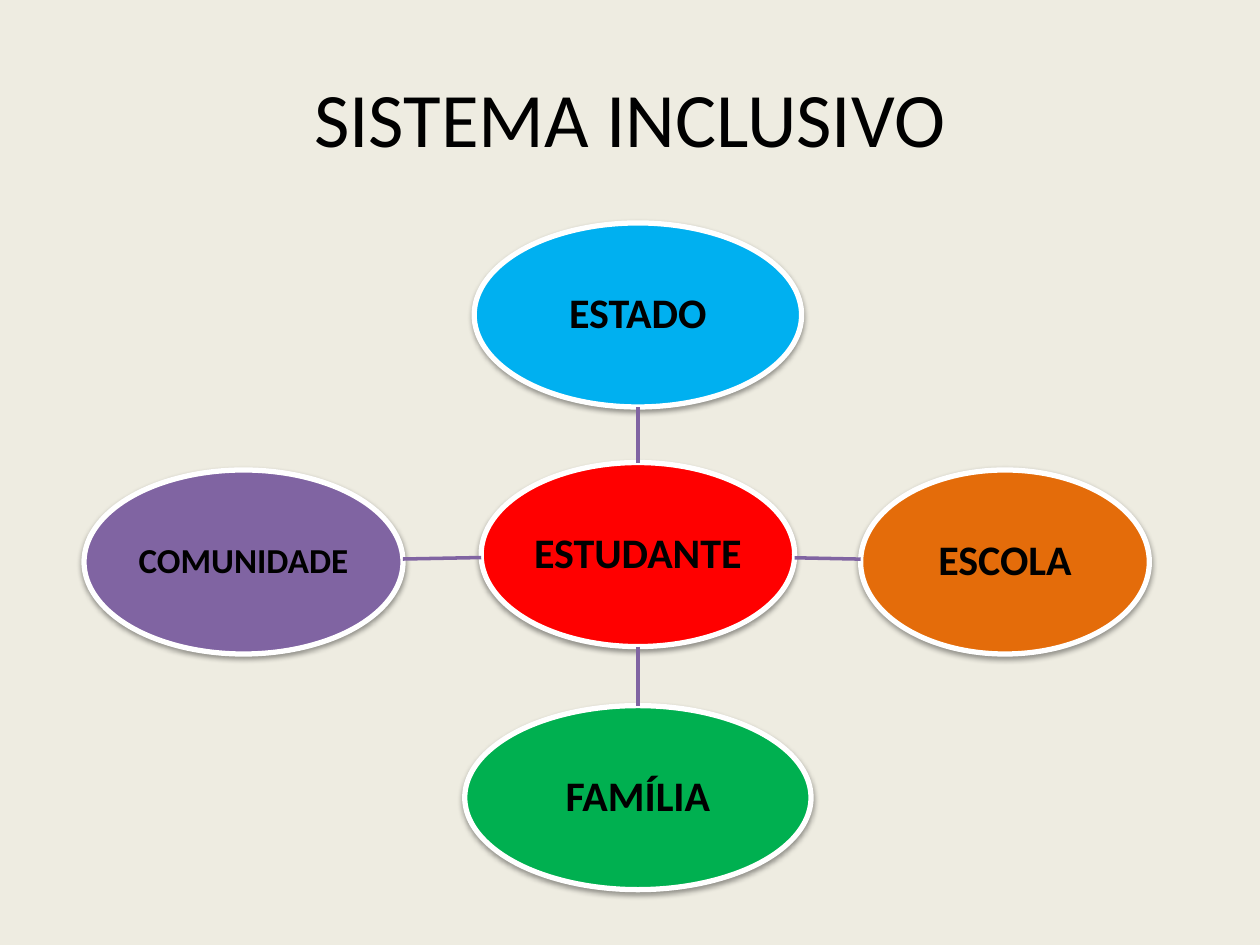
import math

import lxml.etree
import pptx
import pptx.dml.color
import pptx.enum.shapes
import pptx.enum.text
import pptx.oxml.ns
import pptx.util

Cm = pptx.util.Cm
RGBColor = pptx.dml.color.RGBColor
qn = pptx.oxml.ns.qn

CREAM = RGBColor(0xEE, 0xEC, 0xE1)
BLACK = RGBColor(0x00, 0x00, 0x00)
WHITE = RGBColor(0xFF, 0xFF, 0xFF)
RED = RGBColor(0xFF, 0x00, 0x00)
BLUE = RGBColor(0x00, 0xB0, 0xF0)
ORANGE = RGBColor(0xE4, 0x6C, 0x0A)
GREEN = RGBColor(0x00, 0xB0, 0x50)
PURPLE = RGBColor(0x80, 0x64, 0xA2)

OVAL_HEIGHT = 3.71
HUB = ("ESTUDANTE", 12.86, 11.18, 6.32, RED, 24)
# label, centre x, centre y, width (cm), fill, text size (pt)
SPOKES = [
    ("ESTADO", 12.86, 6.35, 6.6, BLUE, 24),
    ("ESCOLA", 20.26, 11.33, 5.82, ORANGE, 24),
    ("FAMÍLIA", 12.86, 16.08, 6.98, GREEN, 24),
    ("COMUNIDADE", 4.91, 11.33, 6.43, PURPLE, 20),
]


def write_text(shape, text, *, size, bold=False, line_spacing=1.0, inset=0.25):
    frame = shape.text_frame
    frame.word_wrap = True
    frame.vertical_anchor = pptx.enum.text.MSO_ANCHOR.MIDDLE
    frame.margin_left = frame.margin_right = Cm(inset)
    frame.margin_top = frame.margin_bottom = Cm(inset)
    para = frame.paragraphs[0]
    para.alignment = pptx.enum.text.PP_ALIGN.CENTER
    para.line_spacing = line_spacing
    span = para.add_run()
    span.text = text
    span.font.name = "Calibri"
    span.font.size = pptx.util.Pt(size)
    span.font.bold = bold
    span.font.color.rgb = BLACK


def rim_point(oval, target):
    """Return where the line from the oval's centre to the target's crosses its rim."""
    x, y, width = oval[1:4]
    dx, dy = target[1] - x, target[2] - y
    scale = 1 / math.hypot(dx / (width / 2), dy / (OVAL_HEIGHT / 2))
    return Cm(x + dx * scale), Cm(y + dy * scale)


deck = pptx.Presentation()
deck.slide_width = Cm(25.4)
deck.slide_height = Cm(19.05)
page = deck.slides.add_slide(deck.slide_layouts[6])
page.background.fill.solid()
page.background.fill.fore_color.rgb = CREAM

title = page.shapes.add_textbox(Cm(1.27), Cm(0.76), Cm(22.86), Cm(3.18))
write_text(title, "SISTEMA INCLUSIVO", size=44)

for oval in [HUB, *SPOKES]:
    label, x, y, width, colour, size = oval
    shape = page.shapes.add_shape(
        pptx.enum.shapes.MSO_SHAPE.OVAL,
        Cm(x - width / 2), Cm(y - OVAL_HEIGHT / 2), Cm(width), Cm(OVAL_HEIGHT),
    )
    shape.fill.solid()
    shape.fill.fore_color.rgb = colour
    shape.line.color.rgb = WHITE
    shape.line.width = pptx.util.Pt(3)
    shape.shadow.inherit = False
    effects = shape._element.spPr.find(qn("a:effectLst"))
    shadow = lxml.etree.SubElement(
        effects, qn("a:outerShdw"),
        blurRad="40000", dist="20000", dir="5400000", rotWithShape="0",
    )
    shade = lxml.etree.SubElement(shadow, qn("a:srgbClr"), val="000000")
    lxml.etree.SubElement(shade, qn("a:alpha"), val="38000")
    write_text(shape, label, size=size, bold=True, line_spacing=0.9, inset=0.04)

for spoke in SPOKES:
    link = page.shapes.add_connector(
        pptx.enum.shapes.MSO_CONNECTOR.STRAIGHT,
        *rim_point(HUB, spoke), *rim_point(spoke, HUB),
    )
    link.line.color.rgb = PURPLE
    link.line.width = pptx.util.Pt(2)
    lxml.etree.SubElement(link._element.spPr, qn("a:effectLst"))

deck.save("out.pptx")
